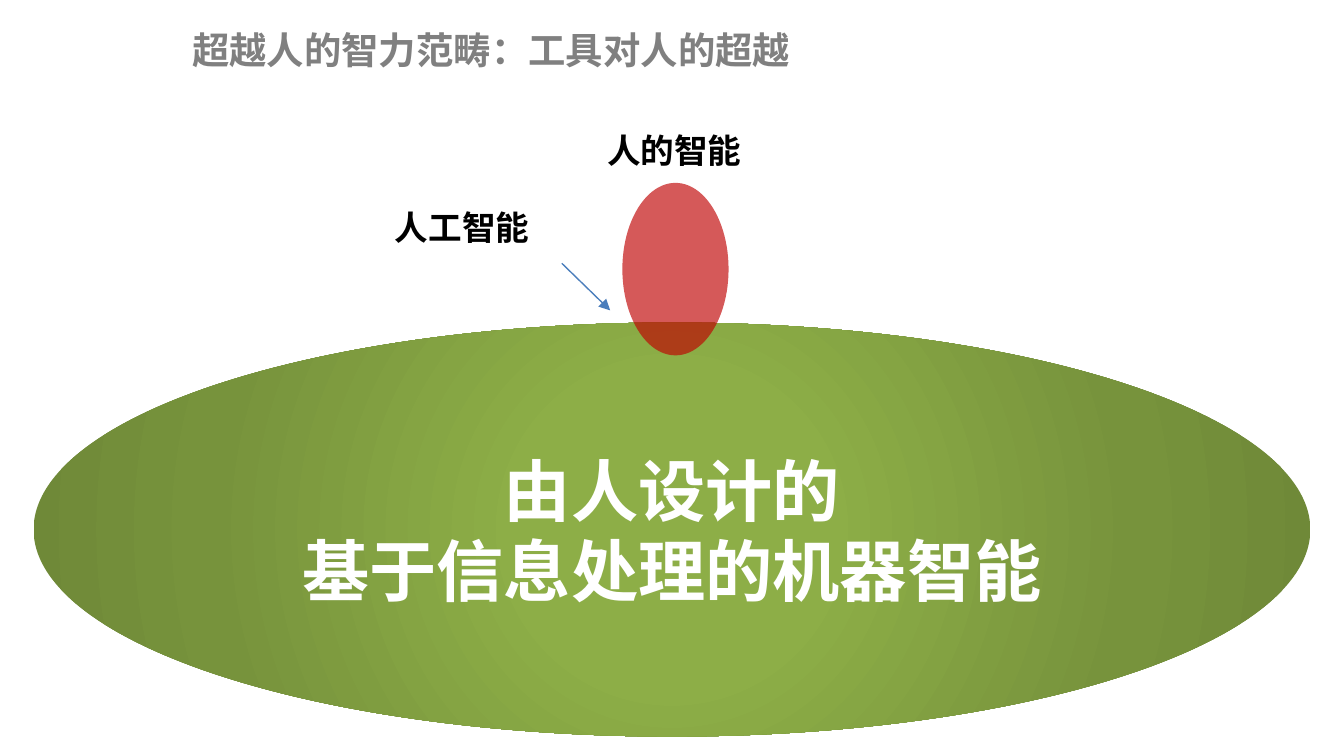
from lxml.etree import SubElement
from pptx import Presentation
from pptx.dml.color import RGBColor
from pptx.enum.shapes import MSO_CONNECTOR, MSO_SHAPE
from pptx.enum.text import MSO_ANCHOR, MSO_AUTO_SIZE, PP_ALIGN
from pptx.oxml.ns import qn
from pptx.util import Pt

FONT = "Noto Sans CJK SC"


def color(hex_value):
    return RGBColor.from_string(hex_value)


def write(frame, lines, size, hex_value, align, frame_format):
    for name, value in frame_format.items():
        setattr(frame, name, value)
    for index, line in enumerate(lines):
        paragraph = frame.paragraphs[0] if index == 0 else frame.add_paragraph()
        paragraph.alignment = align
        run = paragraph.add_run()
        run.text = line
        for name, value in {"size": Pt(size), "bold": True, "name": FONT}.items():
            setattr(run.font, name, value)
        run.font.color.rgb = color(hex_value)
        SubElement(run.font._element, qn("a:ea"), typeface=FONT)


presentation = Presentation()
presentation.slide_width = Pt(720)
presentation.slide_height = Pt(405)
slide = presentation.slides.add_slide(presentation.slide_layouts[6])

ellipses = []
for bounds in [(18, 172.8, 684, 221.8), (333.4, 98, 56.9, 92.4)]:
    ellipse = slide.shapes.add_shape(MSO_SHAPE.OVAL, *map(Pt, bounds))
    ellipse.shadow.inherit = False
    ellipse.line.fill.background()
    ellipses.append(ellipse)
machine_intelligence, human_intelligence = ellipses

machine_intelligence.fill.gradient()
gradient = machine_intelligence._element.spPr.find(qn("a:gradFill"))
for child in list(gradient):
    gradient.remove(child)
stops = SubElement(gradient, qn("a:gsLst"))
for percent, shade in [(0, "8DAE47"), (23, "8DAE47"), (69, "77933C"), (97, "6F8938")]:
    stop = SubElement(stops, qn("a:gs"), pos=str(percent * 1000))
    SubElement(stop, qn("a:srgbClr"), val=shade)
radial = SubElement(gradient, qn("a:path"), path="circle")
SubElement(radial, qn("a:fillToRect"), {side: "50000" for side in "ltrb"})
write(machine_intelligence.text_frame, ["由人设计的", "基于信息处理的机器智能"], 36, "FFFFFF",
      PP_ALIGN.CENTER, {"word_wrap": True, "vertical_anchor": MSO_ANCHOR.MIDDLE})

human_intelligence.fill.solid()
human_intelligence.fill.fore_color.rgb = color("C00000")
red = human_intelligence._element.spPr.find(qn("a:solidFill"))[0]
SubElement(red, qn("a:alpha"), val="65000")

for text, bounds, size, hex_value, wrap in [
    ("超越人的智力范畴：工具对人的超越", (95.8, 10.8, 552.2, 31.5), 20, "808080", True),
    ("人的智能", (318.2, 66.2, 87.1, 29.1), 18, "000000", False),
    ("人工智能", (204.5, 107.3, 95.8, 29.1), 18, "000000", True),
]:
    label = slide.shapes.add_textbox(*map(Pt, bounds))
    write(label.text_frame, [text], size, hex_value, PP_ALIGN.LEFT,
          {"word_wrap": wrap, "auto_size": MSO_AUTO_SIZE.SHAPE_TO_FIT_TEXT})

overlap_arrow = slide.shapes.add_connector(
    MSO_CONNECTOR.STRAIGHT, *map(Pt, (301, 141.1, 326.9, 166.3)))
overlap_arrow.line.color.rgb = color("4B7EBC")
overlap_arrow.line.width = Pt(0.75)
SubElement(overlap_arrow.line._get_or_add_ln(), qn("a:tailEnd"), type="triangle")
SubElement(overlap_arrow._element.spPr, qn("a:effectLst"))

presentation.save("out.pptx")
